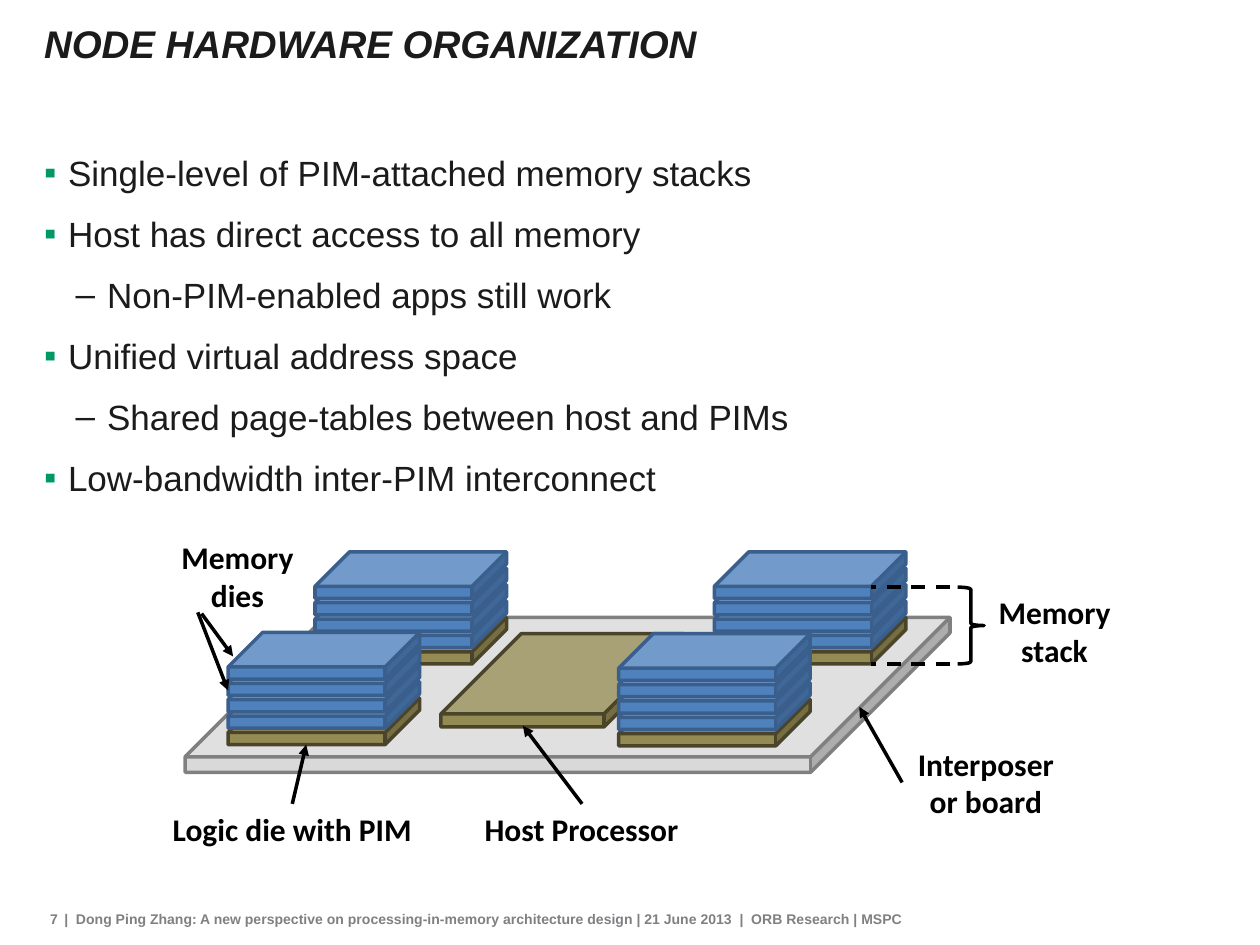
"""Build the slide on node hardware organization."""
from dataclasses import dataclass

from lxml import etree
from pptx import Presentation
from pptx.dml.color import RGBColor
from pptx.enum.dml import MSO_LINE
from pptx.enum.shapes import MSO_CONNECTOR, MSO_SHAPE
from pptx.enum.text import MSO_ANCHOR, MSO_AUTO_SIZE, PP_ALIGN
from pptx.oxml.ns import qn
from pptx.util import Inches, Pt

CUBE, BRACE = MSO_SHAPE.CUBE, MSO_SHAPE.RIGHT_BRACE
STRAIGHT, DASH = MSO_CONNECTOR.STRAIGHT, MSO_LINE.DASH
TOP, MIDDLE = MSO_ANCHOR.TOP, MSO_ANCHOR.MIDDLE
LEFT, CENTER, RIGHT = PP_ALIGN.LEFT, PP_ALIGN.CENTER, PP_ALIGN.RIGHT
NO_FIT = MSO_AUTO_SIZE.NONE

COLORS = {
    "text": "1B1B1B", "footer": "807F82", "bullet": "009966", "black": "000000",
    "board": "D9D9D9", "board_edge": "808080",
    "logic": "948A54", "logic_edge": "4A452A",
    "memory": "4F81BD", "memory_edge": "3A5F8C",
}
DIE_STEP = 0.13
DIES_PER_STACK = 4


@dataclass
class Bullet:
    text: str
    level: int = 0


@dataclass
class Label:
    text: str
    left: float
    top: float
    width: float
    height: float
    wrap: bool = True


@dataclass
class Line:
    start: tuple[float, float]
    end: tuple[float, float]
    dashed: bool = False


BULLETS = [
    Bullet("Single-level of PIM-attached memory stacks"),
    Bullet("Host has direct access to all memory"),
    Bullet("Non-PIM-enabled apps still work", 1),
    Bullet("Unified virtual address space"),
    Bullet("Shared page-tables between host and PIMs", 1),
    Bullet("Low-bandwidth inter-PIM interconnect"),
]
STACKS = [(2.5, 4.9), (1.81, 5.54), (5.67, 4.9), (4.91, 5.55)]
LABELS = [
    Label("Host Processor", 3.74, 6.38, 1.75, 0.4, False),
    Label("Interposer or board", 7.16, 5.86, 1.33, 0.71),
    Label("Logic die with PIM", 1.26, 6.38, 2.12, 0.4, False),
    Label("Memory\ndies", 1.2, 4.22, 1.37, 0.71),
    Label("Memory stack", 7.8, 4.66, 1.14, 0.71),
]
LINES = [
    Line((7.16, 6.21), (6.82, 5.61)),
    Line((4.62, 6.38), (4.15, 5.76)),
    Line((2.32, 6.38), (2.43, 5.91)),
    Line((1.6, 4.87), (1.85, 5.21)),
    Line((1.57, 4.86), (1.81, 5.48)),
    Line((7.54, 5.27), (6.91, 5.27), True),
    Line((7.54, 4.66), (6.91, 4.66), True),
]


def rgb(name: str) -> RGBColor:
    """Return a named colour."""
    return RGBColor.from_string(COLORS[name])


def style_font(font, face: str, size: float, color: str, bold: bool = False) -> None:
    """Set the face, size, colour and weight of a font."""
    font.name, font.size, font.bold = face, Pt(size), bold
    font.color.rgb = rgb(color)


def set_margins(frame, side: float, end: float) -> None:
    """Set the side and end margins of a text frame."""
    frame.margin_left = frame.margin_right = Inches(side)
    frame.margin_top = frame.margin_bottom = Inches(end)


def add_text(page, label: Label, face: str, size: float, color: str, align):
    """Add a bold text box with one paragraph per line."""
    box = page.shapes.add_textbox(Inches(label.left), Inches(label.top),
                                  Inches(label.width), Inches(label.height))
    frame = box.text_frame
    frame.word_wrap = label.wrap
    frame.text = label.text
    for para in frame.paragraphs:
        para.alignment = align
        for span in para.runs:
            style_font(span.font, face, size, color, True)
    return frame


def add_footer(page, text: str, left: float, width: float, align) -> None:
    """Add one part of the footer line."""
    frame = add_text(page, Label(text, left, 7.18, width, 0.23, False),
                     "Arial", 8, "footer", align)
    set_margins(frame, 0.09, 0.04)
    frame.vertical_anchor = MIDDLE


def add_title(page, text: str) -> None:
    """Place and format the title."""
    title = page.shapes.title
    title.left, title.top = Inches(0.35), Inches(0.16)
    title.width, title.height = Inches(9.3), Inches(0.7)
    frame = title.text_frame
    frame.text = text
    frame.auto_size, frame.vertical_anchor = NO_FIT, TOP
    set_margins(frame, 0, 0)
    para = frame.paragraphs[0]
    para.alignment = LEFT
    font = para.runs[0].font
    style_font(font, "Arial", 22, "text", True)
    font.italic = True


def add_bullets(page, bullets: list[Bullet]) -> None:
    """Add the two-level bullet list."""
    box = page.shapes.add_textbox(Inches(0.35), Inches(1.2), Inches(9.3), Inches(3.58))
    frame = box.text_frame
    frame.word_wrap = True
    set_margins(frame, 0, 0)
    frame.text = "\n".join(bullet.text for bullet in bullets)
    for index, (para, bullet) in enumerate(zip(frame.paragraphs, bullets)):
        mark, color, margin, hang = (("▪", "bullet", 0.19, 0.19),
                                     ("–", "text", 0.5, 0.25))[bullet.level]
        para.level = bullet.level
        para.space_before = Pt(5.4 if index else 0)
        para.space_after = Pt(5.4)
        props = para._p.get_or_add_pPr()
        props.set("marL", str(Inches(margin)))
        props.set("indent", str(-Inches(hang)))
        tint = etree.SubElement(props, qn("a:buClr"))
        etree.SubElement(tint, qn("a:srgbClr"), val=COLORS[color])
        etree.SubElement(props, qn("a:buFont"), typeface="Arial")
        etree.SubElement(props, qn("a:buChar"), char=mark)
        style_font(para.runs[0].font, "Arial", 20, "text")


def add_cube(page, left: float, top: float, width: float, height: float,
             depth: float, color: str) -> None:
    """Add a slab with its edge colour."""
    cube = page.shapes.add_shape(CUBE, Inches(left), Inches(top),
                                 Inches(width), Inches(height))
    cube.adjustments[0] = depth
    cube.shadow.inherit = False
    cube.fill.solid()
    cube.fill.fore_color.rgb = rgb(color)
    cube.line.color.rgb = rgb(f"{color}_edge")
    cube.line.width = Pt(2)


def add_stack(page, left: float, base: float) -> None:
    """Add a logic die with memory dies on top."""
    for layer in range(DIES_PER_STACK + 1):
        add_cube(page, left, base - layer * DIE_STEP, 1.52, 0.37, 0.74,
                 "memory" if layer else "logic")


def add_line(page, line: Line) -> None:
    """Add a dashed line or a pointing arrow."""
    connector = page.shapes.add_connector(STRAIGHT, *map(Inches, line.start + line.end))
    connector.line.color.rgb = rgb("black")
    connector.line.width = Pt(2)
    props = connector._element.spPr
    if line.dashed:
        connector.line.dash_style = DASH
    else:
        etree.SubElement(props.find(qn("a:ln")), qn("a:tailEnd"), type="triangle")
    etree.SubElement(props, qn("a:effectLst"))


def add_brace(page) -> None:
    """Add the brace that spans a memory stack."""
    brace = page.shapes.add_shape(BRACE, Inches(7.6), Inches(4.66),
                                  Inches(0.21), Inches(0.61))
    brace.shadow.inherit = False
    brace.fill.background()
    brace.line.color.rgb = rgb("black")
    brace.line.width = Pt(2)


def main() -> None:
    """Build and save the deck."""
    deck = Presentation()
    deck.slide_width, deck.slide_height = Inches(10), Inches(7.5)
    page = deck.slides.add_slide(deck.slide_layouts[5])
    add_footer(page, "7", 0.23, 0.32, RIGHT)
    add_footer(page, "|  Dong Ping Zhang: A new perspective on processing-in-memory architecture "
               "design | 21 June 2013  |  ORB Research | MSPC", 0.42, 6.92, LEFT)
    add_title(page, "NODE HARDWARE ORGANIZATION")
    add_bullets(page, BULLETS)
    add_cube(page, 1.47, 4.9, 6.07, 1.23, 0.9, "board")
    add_cube(page, 3.5, 5.03, 1.93, 0.74, 0.86, "logic")
    for left, base in STACKS:
        add_stack(page, left, base)
    for label in LABELS:
        add_text(page, label, "Calibri", 18, "black", CENTER)
    for line in LINES:
        add_line(page, line)
    add_brace(page)
    deck.save("out.pptx")


if __name__ == "__main__":
    main()
